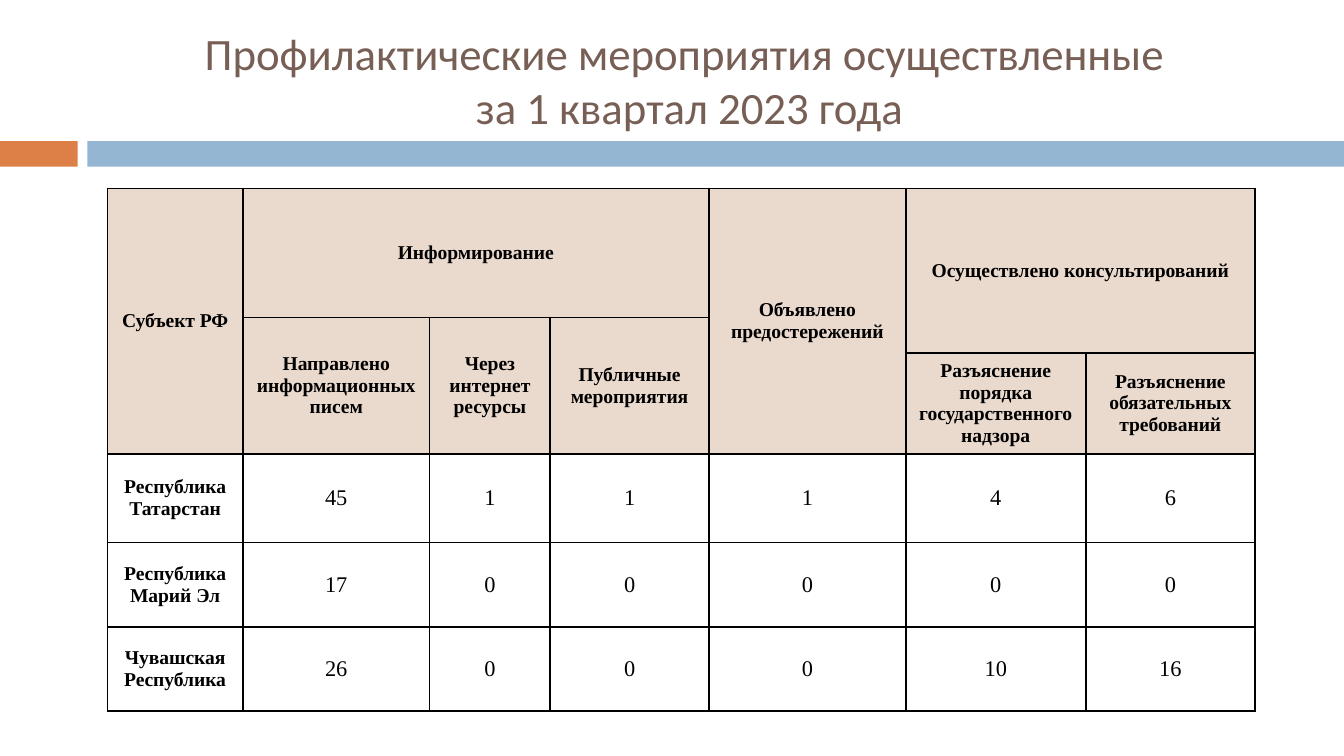
from lxml import etree
from pptx import Presentation
from pptx.dml.color import RGBColor
from pptx.enum.shapes import MSO_SHAPE
from pptx.enum.text import MSO_ANCHOR, MSO_AUTO_SIZE, PP_ALIGN
from pptx.oxml.ns import qn
from pptx.util import Cm, Pt

COLORS = {"title": "775F55", "orange": "DD8047", "blue": "94B6D2",
          "header": "964305", "black": "000000"}
HEADER_ROWS = 3
HEADER_OPACITY = 20


def write(frame, text, size, font="Times New Roman", color="black", bold=False):
    """Put centred lines of text into a text frame."""
    paragraph = frame.paragraphs[0]
    paragraph.alignment = PP_ALIGN.CENTER
    for number, line in enumerate(text.split("\n")):
        if number:
            paragraph.add_line_break()
        run = paragraph.add_run()
        run.text = line
        run.font.size = Pt(size)
        run.font.name = font
        run.font.bold = bold
        run.font.color.rgb = RGBColor.from_string(COLORS[color])


def draw_borders(cell):
    properties = cell._tc.get_or_add_tcPr()
    for side in ("lnL", "lnR", "lnT", "lnB"):
        line = etree.SubElement(properties, qn(f"a:{side}"), w=str(Pt(1)))
        fill = etree.SubElement(line, qn("a:solidFill"))
        etree.SubElement(fill, qn("a:srgbClr"), val=COLORS["black"])


prs = Presentation()
prs.slide_width, prs.slide_height = Cm(25.4), Cm(14.29)
slide = prs.slides.add_slide(prs.slide_layouts[5])

# Title
title = slide.shapes.title
title.left, title.top, title.width, title.height = Cm(1.7), Cm(0.48), Cm(22.66), Cm(2.06)
title.text_frame.auto_size = MSO_AUTO_SIZE.NONE
title.text_frame.word_wrap = True
title.text_frame.vertical_anchor = MSO_ANCHOR.MIDDLE
write(title.text_frame, "Профилактические мероприятия осуществленные \nза 1 квартал 2023 года",
      24, font="Calibri", color="title")

# Divider under the title
for left, width, color in ((0, 1.47, "orange"), (1.65, 23.75, "blue")):
    bar = slide.shapes.add_shape(MSO_SHAPE.RECTANGLE, Cm(left), Cm(2.67), Cm(width), Cm(0.48))
    bar.shadow.inherit = False
    bar.fill.solid()
    bar.fill.fore_color.rgb = RGBColor.from_string(COLORS[color])
    bar.line.fill.background()

# Table of measures by region
column_widths = [2.56, 3.53, 2.28, 3, 3.72, 3.4, 3.2]
row_heights = [2.44, 0.66, 1.89, 1.68, 1.6, 1.58]
contents = [
    ["Субъект РФ", "Информирование", "", "", "Объявлено предостережений",
     "Осуществлено консультирований", ""],
    ["", "Направлено информационных писем", "Через интернет ресурсы",
     "Публичные мероприятия", "", "", ""],
    ["", "", "", "", "", "Разъяснение порядка государственного надзора",
     "Разъяснение обязательных требований"],
    ["Республика Татарстан", 45, 1, 1, 1, 4, 6],
    ["Республика Марий Эл", 17, 0, 0, 0, 0, 0],
    ["Чувашская Республика", 26, 0, 0, 0, 10, 16],
]
# First row and column, then last row and column
merges = [(0, 0, 2, 0), (0, 1, 0, 3), (0, 4, 2, 4), (0, 5, 1, 6),
          (1, 1, 2, 1), (1, 2, 2, 2), (1, 3, 2, 3)]

measures = slide.shapes.add_table(len(row_heights), len(column_widths), Cm(2.03), Cm(3.56),
                                  Cm(sum(column_widths)), Cm(sum(row_heights))).table
measures.first_row = measures.horz_banding = False
for column, width in zip(measures.columns, column_widths):
    column.width = Cm(width)
for row, height in zip(measures.rows, row_heights):
    row.height = Cm(height)
for top, left, bottom, right in merges:
    measures.cell(top, left).merge(measures.cell(bottom, right))

for r, values in enumerate(contents):
    for c, value in enumerate(values):
        cell = measures.cell(r, c)
        is_header = r < HEADER_ROWS
        is_label = is_header or c == 0
        cell.vertical_anchor = MSO_ANCHOR.MIDDLE
        cell.margin_left = cell.margin_right = Cm(0.2)
        cell.margin_top = cell.margin_bottom = Cm(0.13)
        write(cell.text_frame, str(value), 10.5 if is_label else 12, bold=is_label)
        draw_borders(cell)
        if is_header:
            cell.fill.solid()
            cell.fill.fore_color.rgb = RGBColor.from_string(COLORS["header"])
            tint = cell._tc.tcPr.find(qn("a:solidFill")).find(qn("a:srgbClr"))
            etree.SubElement(tint, qn("a:alpha"), val=str(HEADER_OPACITY * 1000))
        else:
            cell.fill.background()

prs.save("out.pptx")
